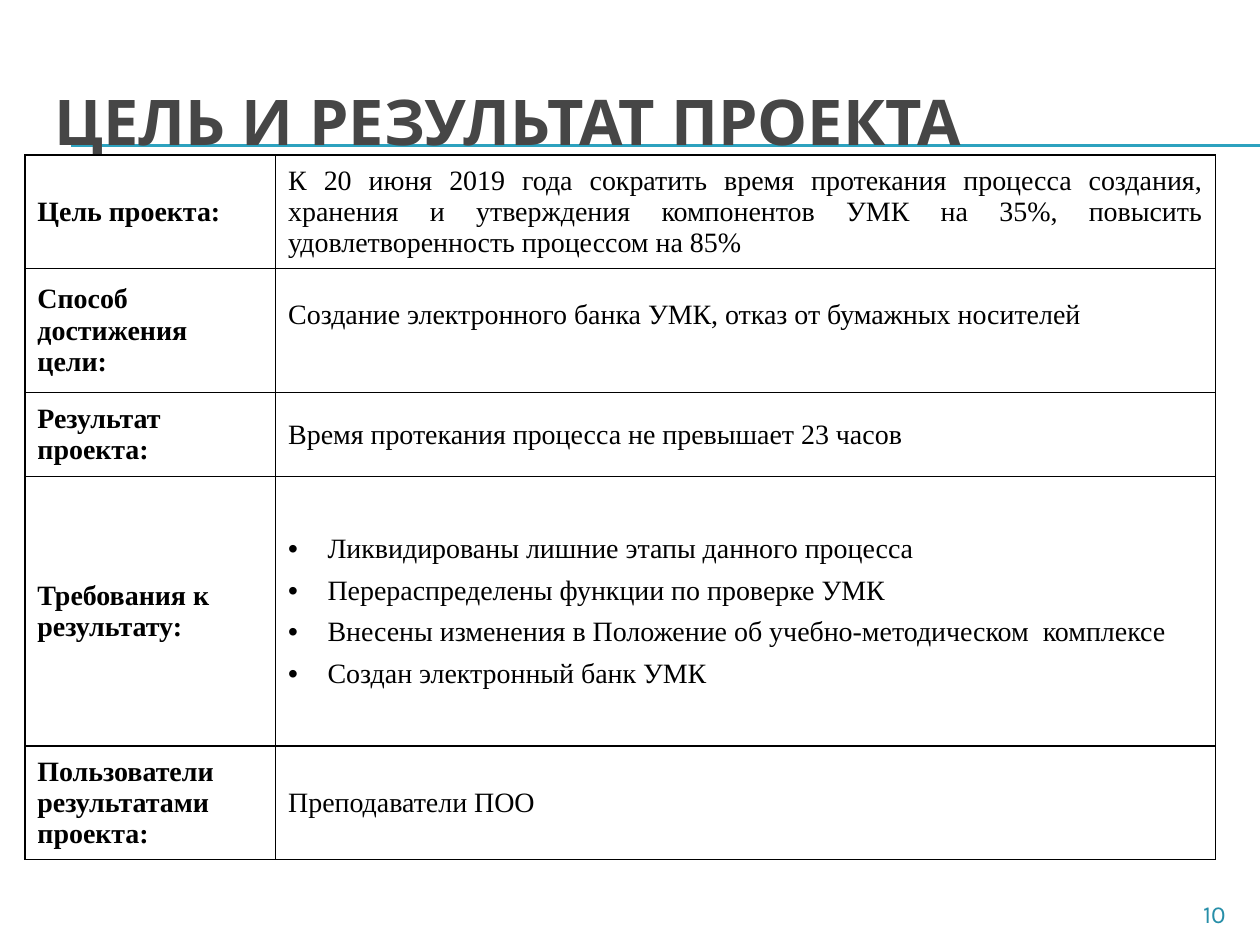
"""Build the slide with the project's goal and result table."""
from dataclasses import dataclass

from lxml.etree import SubElement
from pptx import Presentation
from pptx.dml.color import RGBColor as RGB
from pptx.enum.shapes import MSO_CONNECTOR as CONN
from pptx.enum.text import MSO_ANCHOR as ANCHOR, PP_ALIGN as ALIGN
from pptx.oxml.ns import qn
from pptx.util import Pt


@dataclass(frozen=True)
class Theme:
    heading_font: str = "Karla"
    body_font: str = "Times New Roman"
    title: str = "464646"
    rule: str = "2DA2BF"
    number: str = "268EA8"
    ink: str = "000000"
    paper: str = "FFFFFF"
    title_size: float = 36
    body_size: float = 16
    number_size: float = 14


class Deck:
    def __init__(self, prs, theme):
        self.theme = theme
        self.slide = prs.slides.add_slide(prs.slide_layouts[6])

    def run(self, p, text, font, size, color, bold=False):
        r = p.add_run()
        r.text = text
        r.font.name, r.font.size, r.font.bold = font, Pt(size), bold
        r.font.color.rgb = RGB.from_string(color)

    def rule(self, x1, x2, y):
        line = self.slide.shapes.add_connector(CONN.STRAIGHT, Pt(x1), Pt(y), Pt(x2), Pt(y))
        line.line.color.rgb = RGB.from_string(self.theme.rule)
        line.line.width = Pt(0.75)
        SubElement(line._element.spPr, qn("a:effectLst"))

    def text(self, box, text, size, color, bold=False, align=ALIGN.LEFT, anchor=ANCHOR.TOP):
        tf = self.slide.shapes.add_textbox(*map(Pt, box)).text_frame
        tf.word_wrap = True
        tf.vertical_anchor = anchor
        p = tf.paragraphs[0]
        p.alignment = align
        self.run(p, text, self.theme.heading_font, size, color, bold)

    def bullet(self, p, indent=22.5):
        p.space_after = Pt(6)
        pPr = p._p.get_or_add_pPr()
        pPr.set("marL", str(Pt(indent)))
        pPr.set("indent", str(-Pt(indent)))
        SubElement(pPr, qn("a:buFont"), typeface="Arial")
        SubElement(pPr, qn("a:buChar"), char="•")

    def border(self, cell):
        tcPr = cell._tc.get_or_add_tcPr()
        for side in "LRTB":
            ln = SubElement(tcPr, qn(f"a:ln{side}"), w=str(Pt(1)))
            fill = SubElement(ln, qn("a:solidFill"))
            SubElement(fill, qn("a:srgbClr"), val=self.theme.ink)

    def cell(self, cell, lines, bold, align):
        self.border(cell)
        cell.fill.solid()
        cell.fill.fore_color.rgb = RGB.from_string(self.theme.paper)
        cell.vertical_anchor = ANCHOR.MIDDLE
        cell.margin_left = cell.margin_right = Pt(7.2)
        cell.margin_top = cell.margin_bottom = Pt(3.6)
        tf = cell.text_frame
        for i, line in enumerate(lines):
            p = tf.add_paragraph() if i else tf.paragraphs[0]
            p.alignment = align
            if len(lines) > 1:
                self.bullet(p)
            self.run(p, line, self.theme.body_font, self.theme.body_size, self.theme.ink, bold)

    def table(self, left, top, widths, heights, rows):
        frame = self.slide.shapes.add_table(
            len(rows), len(widths), Pt(left), Pt(top), Pt(sum(widths)), Pt(sum(heights)))
        table = frame.table
        table.first_row = table.horz_banding = False
        for col, width in zip(table.columns, widths):
            col.width = Pt(width)
        for i, (label, lines) in enumerate(rows):
            table.rows[i].height = Pt(heights[i])
            self.cell(table.cell(i, 0), [label], True, ALIGN.LEFT)
            self.cell(table.cell(i, 1), lines, False, ALIGN.JUSTIFY)
        return table


ROWS = [
    ("Цель проекта:", [
        "К 20 июня 2019 года сократить время протекания процесса создания, хранения "
        "и утверждения компонентов УМК на 35%, повысить удовлетворенность процессом на 85%"]),
    ("Способ достижения цели:", [
        "Создание электронного банка УМК, отказ от бумажных носителей"]),
    ("Результат проекта:", ["Время протекания процесса не превышает 23 часов"]),
    ("Требования к результату:", [
        "Ликвидированы лишние этапы данного процесса",
        "Перераспределены функции по проверке УМК",
        "Внесены изменения в Положение об учебно-методическом  комплексе",
        "Создан электронный банк УМК"]),
    ("Пользователи результатами проекта:", ["Преподаватели ПОО"]),
]


def main():
    prs = Presentation()
    prs.slide_width, prs.slide_height = Pt(720), Pt(540)
    theme = Theme()
    s = Deck(prs, theme)
    for y in (82.8, 83.4):
        s.rule(40.5, 720, y)
    s.text((24, 36, 684, 66), "ЦЕЛЬ И РЕЗУЛЬТАТ ПРОЕКТА", theme.title_size, theme.title,
           bold=True, anchor=ANCHOR.MIDDLE)
    s.text((36.5, 510, 671, 19.5), "10", theme.number_size, theme.number, align=ALIGN.RIGHT)
    table = s.table(14.2, 88.6, (143.3, 537), (60.6, 71, 48, 154, 60.6), ROWS)
    table.cell(1, 1).margin_bottom = Pt(21)
    prs.save("out.pptx")


if __name__ == "__main__":
    main()
